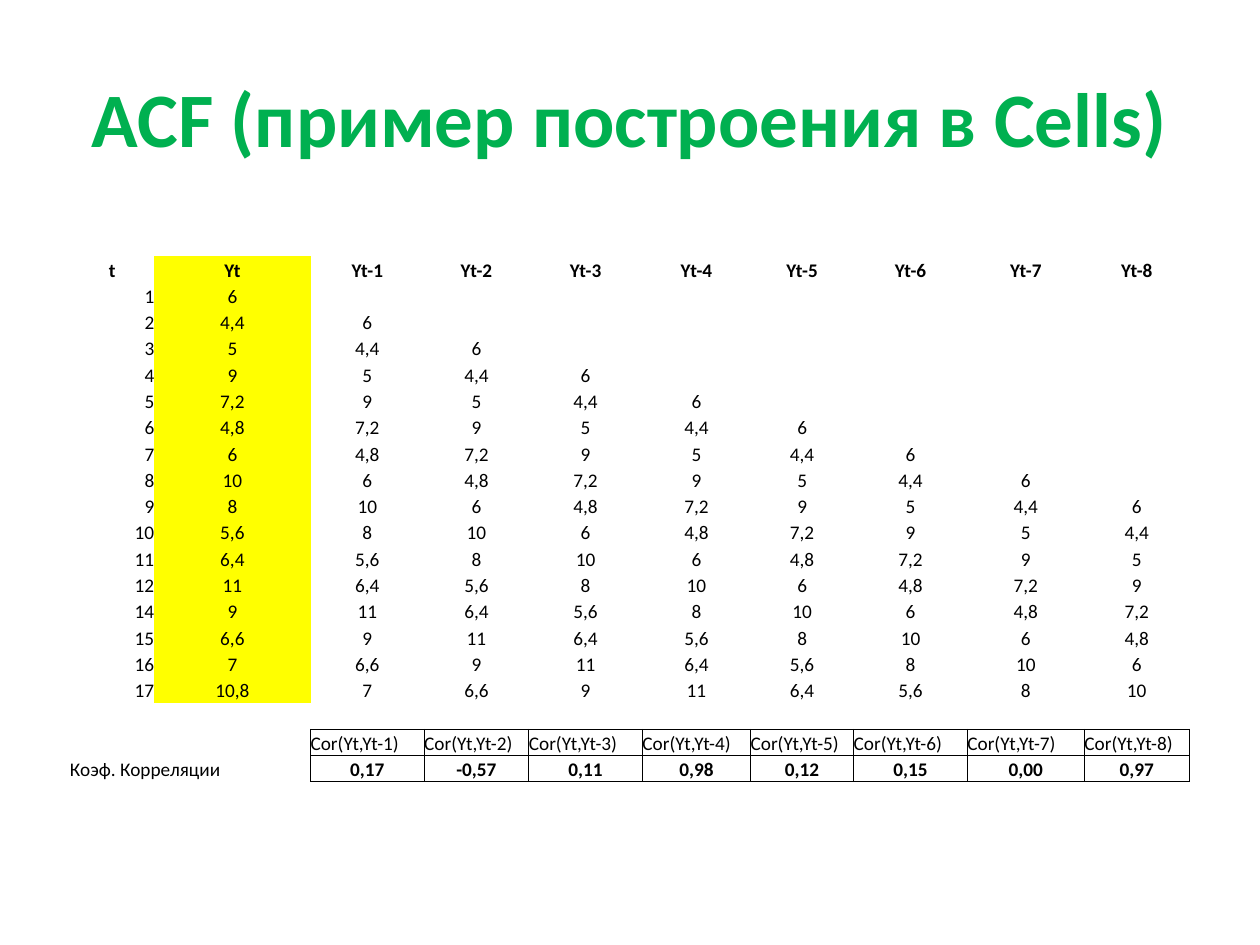
from dataclasses import dataclass

from lxml.etree import SubElement
from pptx import Presentation
from pptx.dml.color import RGBColor as Rgb
from pptx.enum.text import MSO_ANCHOR as Anchor, PP_ALIGN as Align
from pptx.oxml.ns import qn
from pptx.util import Cm, Pt


@dataclass(frozen=True)
class Theme:
    face: str = "Calibri"
    ink: str = "000000"
    green: str = "00B050"
    mark: str = "FFFF00"
    head: float = 44
    body: float = 11
    rule: float = 0.5
    plain: str = "{2D5ABB26-0587-4C30-8999-92F81FD0307C}"


def apply(obj, form):
    for name, value in form.items():
        setattr(obj, name, value)


class Page:
    def __init__(self, slide, theme):
        self.slide, self.theme = slide, theme

    def label(self, para, text, size, color, bold=False, align=Align.LEFT):
        para.alignment = align
        if not text:
            # An empty line keeps the row height through its end mark
            para._p.get_or_add_endParaRPr().set("sz", str(int(size * 100)))
            return
        run = para.add_run()
        run.text = text
        apply(run.font, {"name": self.theme.face, "size": Pt(size), "bold": bold})
        run.font.color.rgb = Rgb.from_string(color)

    def title(self, text, box):
        frame = self.slide.shapes.add_textbox(*map(Cm, box)).text_frame
        apply(frame, {"word_wrap": True, "vertical_anchor": Anchor.MIDDLE})
        self.label(frame.paragraphs[0], text, self.theme.head,
                   self.theme.green, True, Align.CENTER)

    def table(self, left, top, widths, high, count):
        size = sum(widths), high * count
        shape = self.slide.shapes.add_table(
            count, len(widths), *map(Cm, (left, top, *size)))
        grid = shape.table
        apply(grid, {"first_row": False, "horz_banding": False})
        grid._tbl.tblPr.find(qn("a:tableStyleId")).text = self.theme.plain
        for col, wide in zip(grid.columns, widths):
            col.width = Cm(wide)
        for row in grid.rows:
            row.height = Cm(high)
        return grid

    def cell(self, cell, text="", fill=None, boxed=False, **form):
        sides = ("left", "right", "top", "bottom")
        apply(cell, {f"margin_{side}": 0 for side in sides})
        cell.vertical_anchor = Anchor.BOTTOM
        if boxed:
            self.frame(cell)
        if fill:
            cell.fill.solid()
            cell.fill.fore_color.rgb = Rgb.from_string(fill)
        else:
            cell.fill.background()
        self.label(cell.text_frame.paragraphs[0], text,
                   self.theme.body, self.theme.ink, **form)

    def frame(self, cell):
        props = cell._tc.get_or_add_tcPr()
        for side in "LRTB":
            line = SubElement(props, qn(f"a:ln{side}"), w=str(Pt(self.theme.rule)))
            paint = SubElement(line, qn("a:solidFill"))
            SubElement(paint, qn("a:srgbClr"), val=self.theme.ink)


# Series and its correlations by lag
TIMES = [*range(1, 13), *range(14, 18)]
SERIES = "6 4,4 5 9 7,2 4,8 6 10 8 5,6 6,4 11 9 6,6 7 10,8".split()
CORRS = "0,17 -0,57 0,11 0,98 0,12 0,15 0,00 0,97".split()
LAGS = range(1, len(CORRS) + 1)
WIDTHS = [1.7, 3.15, 2.29, 2.11, 2.29, 2.18, 2.08, 2.29, 2.36, 2.11]


def rows():
    """Yield each table row as a list of texts."""
    yield ["t", "Yt", *(f"Yt-{lag}" for lag in LAGS)]
    for pos, time in enumerate(TIMES):
        past = [SERIES[pos - lag] if lag <= pos else "" for lag in LAGS]
        yield [str(time), SERIES[pos], *past]
    yield [""] * len(WIDTHS)
    yield ["", "", *(f"Cor(Yt,Yt-{lag})" for lag in LAGS)]
    yield ["Коэф. Корреляции", "", *CORRS]
    yield [""] * len(WIDTHS)


def main():
    deck = Presentation()
    apply(deck, {"slide_width": Cm(25.4), "slide_height": Cm(19.05)})
    theme = Theme()
    page = Page(deck.slides.add_slide(deck.slide_layouts[6]), theme)

    # Title
    page.title("ACF (пример построения в Cells)", (1.27, 0.76, 22.86, 3.18))

    # Lag table with the correlation rows below
    data = list(rows())
    grid = page.table(1.41, 5.16, WIDTHS, 0.53, len(data))
    last = len(TIMES)
    names, sums = last + 2, last + 3
    for row, texts in enumerate(data):
        for col, text in enumerate(texts):
            boxed = row in (names, sums) and col > 1
            align = Align.CENTER
            if row == names or (row == sums and col == 0):
                align = Align.LEFT
            elif col == 0 and row > 0:
                align = Align.RIGHT
            page.cell(grid.cell(row, col), text, boxed=boxed, align=align,
                      fill=theme.mark if col == 1 and row <= last else None,
                      bold=row == 0 or (row == sums and boxed))
    grid.cell(sums, 0).merge(grid.cell(sums, 1))

    deck.save("out.pptx")


if __name__ == "__main__":
    main()
